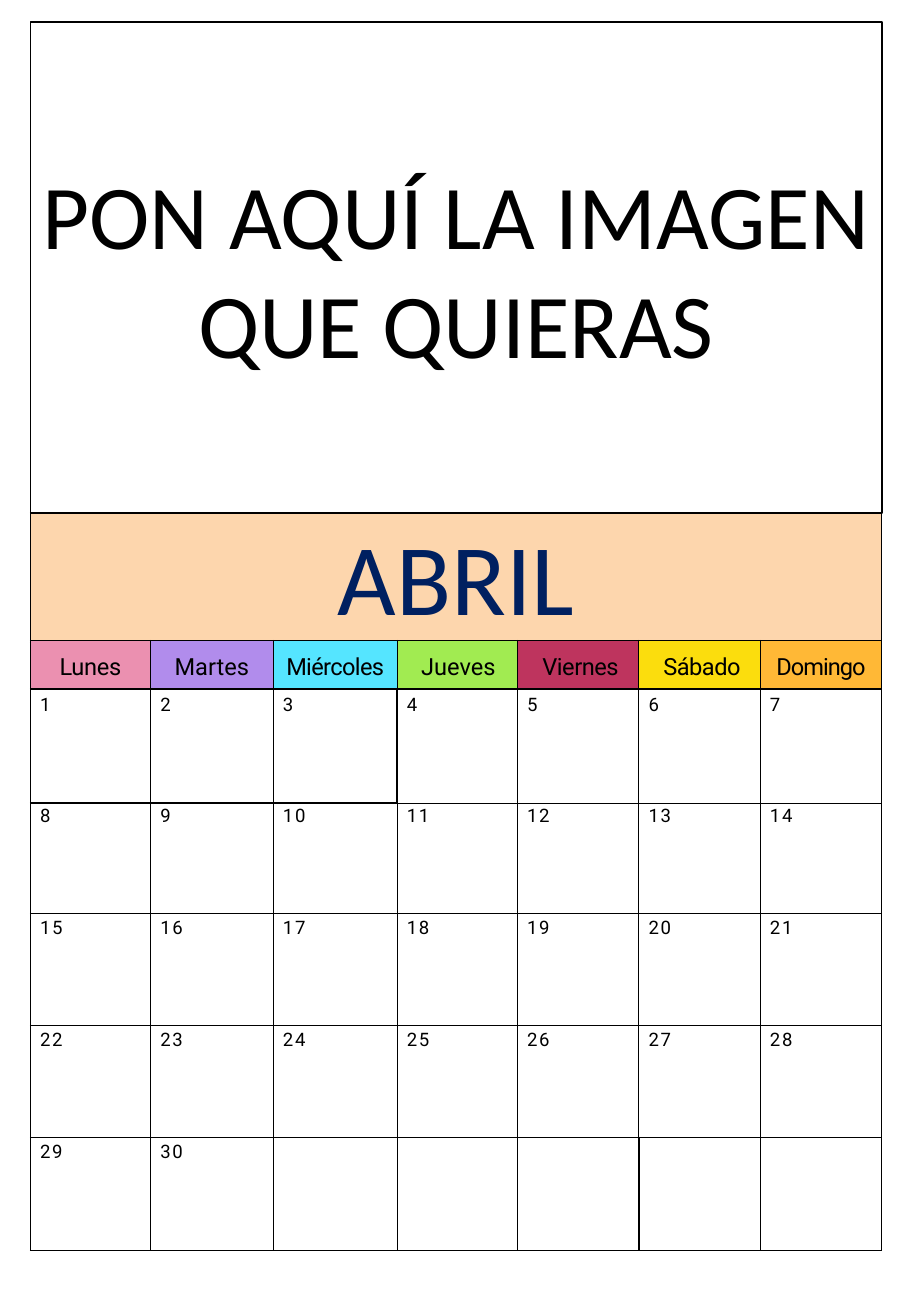
from lxml.etree import SubElement as Sub
from pptx import Presentation
from pptx.dml.color import RGBColor
from pptx.enum.shapes import MSO_SHAPE as Kind
from pptx.enum.text import MSO_ANCHOR as Anchor, PP_ALIGN as Align
from pptx.oxml.ns import qn
from pptx.util import Inches, Pt

BLACK = RGBColor(0x00, 0x00, 0x00)
WHITE = RGBColor(0xFF, 0xFF, 0xFF)
NAVY = RGBColor(0x00, 0x20, 0x60)
PEACH = RGBColor(0xFD, 0xD6, 0xAD)
PINK = RGBColor(0xEB, 0x90, 0xB0)
VIOLET = RGBColor(0xB1, 0x8C, 0xEC)
CYAN = RGBColor(0x55, 0xE5, 0xFF)
GREEN = RGBColor(0xA1, 0xEB, 0x51)
CRIMSON = RGBColor(0xBE, 0x34, 0x5E)
YELLOW = RGBColor(0xFB, 0xDD, 0x0D)
ORANGE = RGBColor(0xFF, 0xB8, 0x36)

LEFT, WIDTH = 0.25, 7.01
THIN, THICK = 0.75, 1
DAYS = [
    ("Lunes", PINK, -0.2, 0),
    ("Martes", VIOLET, 0, 0),
    ("Miércoles", CYAN, -0.4, 0),
    ("Jueves", GREEN, 0, 0.02),
    ("Viernes", CRIMSON, -0.3, 0.04),
    ("Sábado", YELLOW, -0.3, 0.04),
    ("Domingo", ORANGE, -0.6, 0),
]
COLS = [0.99, 1.01, 1.02, 0.99, 1, 1, 1]
ROWS = [0.4, 0.94, 0.91, 0.92, 0.92, 0.93]
TOPS = [0.05, 0.04, 0.02, 0.03, 0.03, 0.03]
BOLD = {(1, 0), (1, 1), (1, 2), (5, 5), (5, 6)}
SIDES = {"L": (0, -1), "R": (0, 1), "T": (-1, 0), "B": (1, 0)}
LAST = 30


class Page:
    """Hold the calendar style and draw its parts on the current slide."""

    def __init__(self, slide):
        self.shapes = slide.shapes

    def label(self, frame, text, font, size, color, align=Align.CENTER,
              space=0, indent=0, before=0):
        frame.text = text
        para = frame.paragraphs[0]
        para.alignment = align
        para.space_before = Pt(before)
        if indent:
            para._p.get_or_add_pPr().set("marL", str(Inches(indent)))
        for run in para.runs:
            run.font.name = font
            run.font.size = Pt(size)
            run.font.color.rgb = color
            if space:
                run._r.get_or_add_rPr().set("spc", str(round(space * 100)))

    def box(self, top, height, text):
        shape = self.shapes.add_shape(
            Kind.RECTANGLE, Inches(LEFT), Inches(top), Inches(WIDTH), Inches(height))
        shape.shadow.inherit = False
        shape.fill.solid()
        shape.fill.fore_color.rgb = WHITE
        shape.line.color.rgb = BLACK
        shape.line.width = Pt(THICK)
        frame = shape.text_frame
        frame.word_wrap = True
        frame.vertical_anchor = Anchor.MIDDLE
        self.label(frame, text, "Calibri", 54, BLACK)

    def grid(self, top, cols, rows):
        table = self.shapes.add_table(
            len(rows), len(cols), Inches(LEFT), Inches(top),
            Inches(sum(cols)), Inches(sum(rows))).table
        table.first_row = table.horz_banding = False
        for col, width in zip(table.columns, cols):
            col.width = Inches(width)
        for row, height in zip(table.rows, rows):
            row.height = Inches(height)
        return table

    def cell(self, cell, color, inset, widths, anchor=Anchor.TOP):
        cell.margin_left = cell.margin_right = cell.margin_bottom = 0
        cell.margin_top = Inches(inset)
        cell.vertical_anchor = anchor
        props = cell._tc.get_or_add_tcPr()
        for side, width in widths.items():
            line = Sub(props, qn(f"a:ln{side}"), w=str(Pt(width)))
            fill = Sub(line, qn("a:solidFill"))
            Sub(fill, qn("a:srgbClr"), val=str(BLACK))
        cell.fill.solid()
        cell.fill.fore_color.rgb = color

    def title(self, top, height, text):
        cell = self.grid(top, [WIDTH], [height]).cell(0, 0)
        widths = {side: THIN for side in SIDES} | {"B": THICK}
        self.cell(cell, PEACH, 0.05, widths, Anchor.MIDDLE)
        self.label(cell.text_frame, text, "Calibri", 60, NAVY, before=4.2)

    def month(self, top):
        table = self.grid(top, COLS, ROWS)
        for row, inset in enumerate(TOPS):
            for col, (name, color, space, indent) in enumerate(DAYS):
                cell = table.cell(row, col)
                widths = {
                    side: THICK if {(row, col), (row + down, col + over)} & BOLD else THIN
                    for side, (down, over) in SIDES.items()}
                if row == 0:
                    self.cell(cell, color, inset, widths, Anchor.MIDDLE)
                    self.label(cell.text_frame, name, "Roboto", 14, BLACK,
                               space=space, indent=indent, before=4.2)
                    continue
                self.cell(cell, WHITE, inset, widths)
                day = (row - 1) * len(DAYS) + col + 1
                if day <= LAST:
                    self.label(cell.text_frame, str(day), "Roboto", 11, BLACK,
                               Align.LEFT, space=1, indent=0.08, before=4.8)


def main():
    deck = Presentation()
    deck.slide_width, deck.slide_height = Inches(7.5), Inches(10.83)
    page = Page(deck.slides.add_slide(deck.slide_layouts[6]))
    page.title(4.22, 1.05, "ABRIL")
    page.month(5.27)
    page.box(0.18, 4.04, "PON AQUÍ LA IMAGEN QUE QUIERAS")
    deck.save("out.pptx")


if __name__ == "__main__":
    main()
